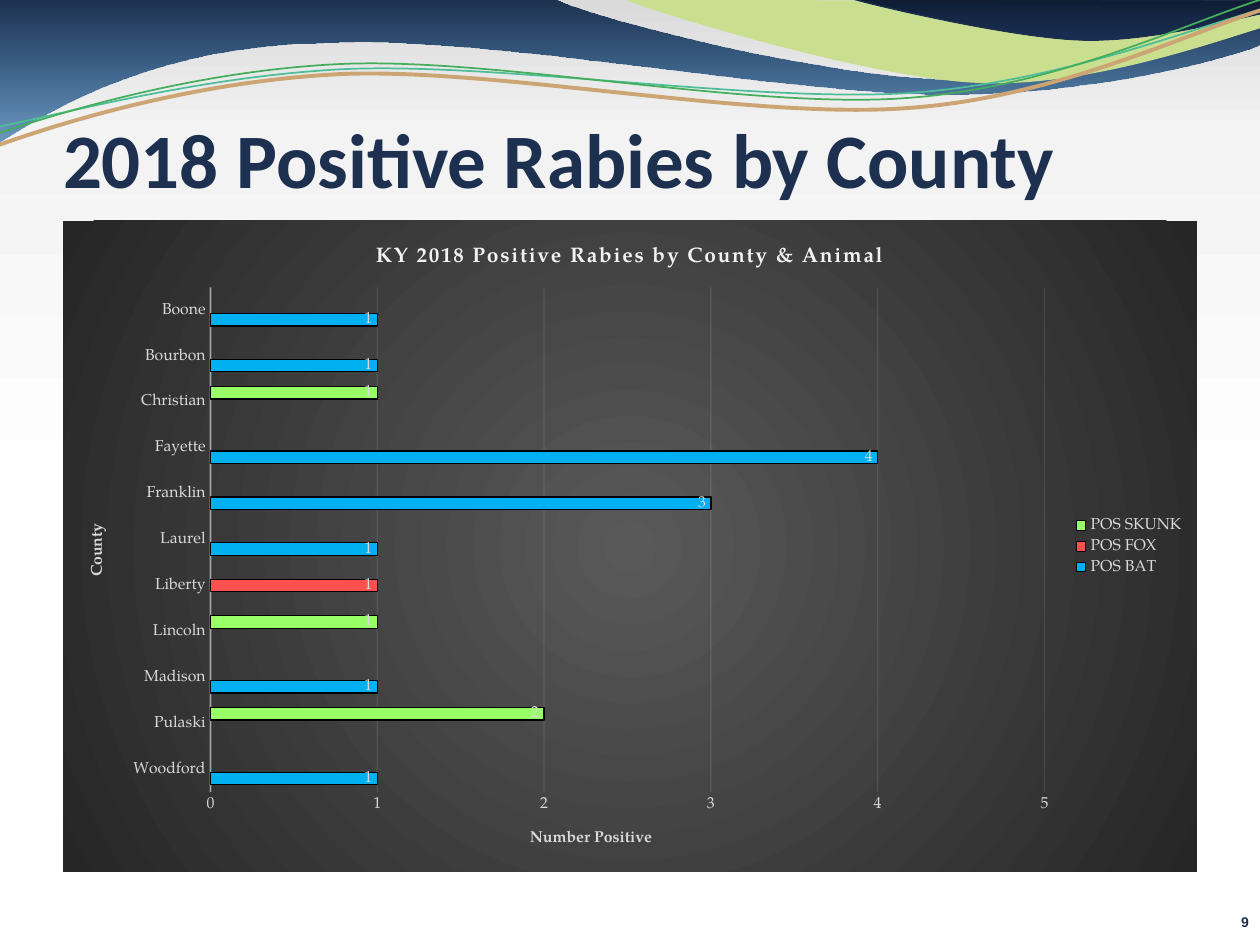
"""Build the slide on 2018 positive rabies cases by county."""
import dataclasses

import lxml.etree
import pptx
import pptx.chart.data
import pptx.dml.color
import pptx.enum.chart
import pptx.enum.text
import pptx.oxml
import pptx.oxml.ns
import pptx.util

PX = 914400 / 126
qn = pptx.oxml.ns.qn
color = pptx.dml.color.RGBColor.from_string


@dataclasses.dataclass(frozen=True)
class Theme:
    navy: str = "1D304F"
    lime: str = "C9DE8F"
    teal: str = "4EBE98"
    tan: str = "CDA474"
    green: str = "45AE5C"
    bat: str = "00B0F0"
    fox: str = "FF5050"
    skunk: str = "99FF66"
    outline: str = "000000"
    pale: str = "F2F2F2"
    label: str = "D9D9D9"
    backdrop: tuple = ((47, "FFFFFF", 100), (86, "F3F3F3", 100), (100, "DADADA", 100))
    blue_fade: tuple = ((0, "1D304F", 100), (100, "004C90", 55))
    night_fade: tuple = ((0, "0F1C31", 100), (50, "152846", 100), (100, "192F53", 100))
    chart_fade: tuple = ((0, "595959", 100), (100, "262626", 100))
    head_font: str = "Calibri"
    number_font: str = "Arial"
    chart_font: str = "TeX Gyre Pagella"
    head_size: int = 44
    chart_title_size: int = 12
    chart_size: int = 9
    number_size: int = 8


theme = Theme()


def write(frame, text, *, font, size, ink, align=None, spacing=None):
    para = frame.paragraphs[0]
    para.alignment = align
    span = para.add_run()
    span.text = text
    span.font.name = font
    span.font.size = pptx.util.Pt(size)
    span.font.bold = True
    span.font.color.rgb = color(ink)
    if spacing:
        span.font._element.set("spc", str(spacing))


def gradient(stops, angle=None):
    marks = "".join(
        f'<a:gs pos="{place * 1000}"><a:srgbClr val="{ink}"><a:alpha val="{alpha * 1000}"/></a:srgbClr></a:gs>'
        for place, ink, alpha in stops)
    if angle is None:
        course = '<a:path path="circle"><a:fillToRect l="50000" t="50000" r="50000" b="50000"/></a:path>'
    else:
        course = f'<a:lin ang="{angle * 60000}" scaled="0"/>'
    return pptx.oxml.parse_xml(
        f'<a:gradFill {pptx.oxml.ns.nsdecls("a")}><a:gsLst>{marks}</a:gsLst>{course}</a:gradFill>')


deck = pptx.Presentation()
deck.slide_width = round(1260 * PX)
deck.slide_height = round(945 * PX)
page = deck.slides.add_slide(deck.slide_layouts[5])
page.background.fill.solid()
backdrop = page._element.xpath(".//p:bgPr")[0]
backdrop.replace(backdrop.find(qn("a:solidFill")), gradient(theme.backdrop, 270))

waves = [
    (theme.blue_fade, None, 0, [
        [(0, 0)], [(554, -1)],
        [(600, 21), (837, 79), (955, 79)], [(1075, 79), (1207, 33), (1260, 11)],
        [(1261, 45)], [(1239, 55), (1096, 96), (940, 94)],
        [(784, 94), (481, 35), (324, 43)], [(163, 45), (58, 105), (-1, 142)]]),
    (theme.lime, None, 0, [
        [(626, 0)], [(663, 15), (873, 79), (979, 83)],
        [(1085, 88), (1215, 42), (1261, 28)], [(1261, 1)]]),
    (theme.night_fade, theme.navy, 0.75, [
        [(853, -1)], [(877, 6), (1013, 38), (1082, 40)],
        [(1150, 42), (1234, 19), (1264, 13)], [(1264, 0)]]),
    (None, theme.teal, 1, [
        [(-19, 130)], [(42, 120), (193, 76), (348, 69)],
        [(503, 63), (756, 103), (910, 93)], [(1065, 82), (1201, 24), (1278, 5)]]),
    (None, theme.tan, 2.25, [
        [(-15, 150)], [(47, 127), (189, 81), (343, 74)],
        [(498, 68), (752, 120), (908, 108)], [(1065, 97), (1201, 26), (1278, 5)]]),
    (None, theme.green, 1, [
        [(-18, 139)], [(45, 117), (188, 71), (341, 64)],
        [(495, 57), (751, 110), (907, 98)], [(1063, 87), (1200, 16), (1276, -5)]]),
]
for fill, ink, weight, segments in waves:
    corners = [(round(x * PX), round(y * PX)) for segment in segments for x, y in segment]
    builder = page.shapes.build_freeform(*corners[0])
    builder.add_line_segments(corners[1:], close=fill is not None)
    wave = builder.convert_to_shape()
    edges = iter(wave._element.xpath(".//a:lnTo"))
    for segment in segments[1:]:
        curve, *handles = [next(edges) for point in segment]
        if handles:
            curve.tag = qn("a:cubicBezTo")
        for handle in handles:
            curve.append(handle[0])
            handle.getparent().remove(handle)
    wave.shadow.inherit = False
    if fill is None:
        wave.fill.background()
    else:
        wave.fill.solid()
        if isinstance(fill, str):
            wave.fill.fore_color.rgb = color(fill)
        else:
            holder = wave._element.spPr
            holder.replace(holder.find(qn("a:solidFill")), gradient(fill, 90))
    if ink:
        wave.line.color.rgb = color(ink)
        wave.line.width = pptx.util.Pt(weight)
    else:
        wave.line.fill.background()

number = page.shapes.add_textbox(*(round(v * PX) for v in (10, 914, 1239, 31)))
title = page.shapes.title
title.left, title.top, title.width, title.height = (round(v * PX) for v in (63, 105, 1134, 115))
page.shapes._spTree.append(title._element)
for box, inset in ((number, 0), (title, 6)):
    frame = box.text_frame
    frame.word_wrap = True
    frame.vertical_anchor = pptx.enum.text.MSO_ANCHOR.TOP
    frame.margin_left = frame.margin_right = frame.margin_bottom = 0
    frame.margin_top = round(inset * PX)
write(number.text_frame, "9", font=theme.number_font, size=theme.number_size, ink=theme.navy,
      align=pptx.enum.text.PP_ALIGN.RIGHT)
write(title.text_frame, "2018 Positive Rabies by County", font=theme.head_font,
      size=theme.head_size, ink=theme.navy, align=pptx.enum.text.PP_ALIGN.LEFT)

counties = ["Woodford", "Pulaski", "Madison", "Lincoln", "Liberty", "Laurel",
            "Franklin", "Fayette", "Christian", "Bourbon", "Boone"]
animals = [
    ("POS BAT", theme.bat, {"Woodford": 1, "Madison": 1, "Laurel": 1, "Franklin": 3,
                            "Fayette": 4, "Bourbon": 1, "Boone": 1}),
    ("POS FOX", theme.fox, {"Liberty": 1}),
    ("POS SKUNK", theme.skunk, {"Pulaski": 2, "Lincoln": 1, "Christian": 1}),
]
data = pptx.chart.data.CategoryChartData()
data.categories = counties
for name, ink, cases in animals:
    data.add_series(name, [cases.get(county) for county in counties])
chart = page.shapes.add_chart(pptx.enum.chart.XL_CHART_TYPE.BAR_CLUSTERED,
                              *(round(v * PX) for v in (63, 221, 1134, 651)), data).chart
chart.has_legend = True
chart.legend.position = pptx.enum.chart.XL_LEGEND_POSITION.RIGHT
chart.legend.include_in_layout = False
plot = chart.plots[0]
plot.gap_width, plot.overlap, plot.vary_by_categories = 115, 25, False
fonts = [chart.font, chart.legend.font, chart.category_axis.tick_labels.font, chart.value_axis.tick_labels.font]
for series, (name, ink, cases) in zip(plot.series, animals):
    series.format.fill.solid()
    series.format.fill.fore_color.rgb = color(ink)
    series.format.line.color.rgb = color(theme.outline)
    series.format.line.width = pptx.util.Pt(0.75)
    series.data_labels.show_value = True
    series.data_labels.position = pptx.enum.chart.XL_LABEL_POSITION.INSIDE_END
    fonts.append(series.data_labels.font)
for font in fonts:
    font.name = theme.chart_font
    font.size = pptx.util.Pt(theme.chart_size)
    font.color.rgb = color(theme.label)

county_axis, case_axis = chart.category_axis, chart.value_axis
case_axis.minimum_scale, case_axis.maximum_scale, case_axis.major_unit = 0, 5, 1
case_axis.format.line.fill.background()
for axis in (county_axis, case_axis):
    axis.major_tick_mark = axis.minor_tick_mark = pptx.enum.chart.XL_TICK_MARK.NONE
for line, weight, axis, route, alpha in (
        (county_axis.format.line, 1, county_axis, "./c:spPr//a:srgbClr", 54),
        (case_axis.major_gridlines.format.line, 0.75, case_axis, "./c:majorGridlines//a:srgbClr", 10)):
    line.color.rgb = color(theme.pale)
    line.width = pptx.util.Pt(weight)
    lxml.etree.SubElement(axis._element.xpath(route)[0], qn("a:alpha")).set("val", str(alpha * 1000))

for heading, text, size, ink, spacing in (
        (chart.chart_title, "KY 2018 Positive Rabies by County & Animal", theme.chart_title_size, theme.pale, 100),
        (county_axis.axis_title, "County", theme.chart_size, theme.label, None),
        (case_axis.axis_title, "Number Positive", theme.chart_size, theme.label, None)):
    write(heading.text_frame, text, font=theme.chart_font, size=size, ink=ink, spacing=spacing)
county_axis.axis_title.text_frame._txBody.bodyPr.set("rot", "-5400000")

space = chart._chartSpace
area = pptx.oxml.parse_xml(f'<c:spPr {pptx.oxml.ns.nsdecls("c", "a")}><a:ln><a:noFill/></a:ln></c:spPr>')
area.insert(0, gradient(theme.chart_fade))
space.xpath("./c:txPr")[0].addprevious(area)
deck.save("out.pptx")
